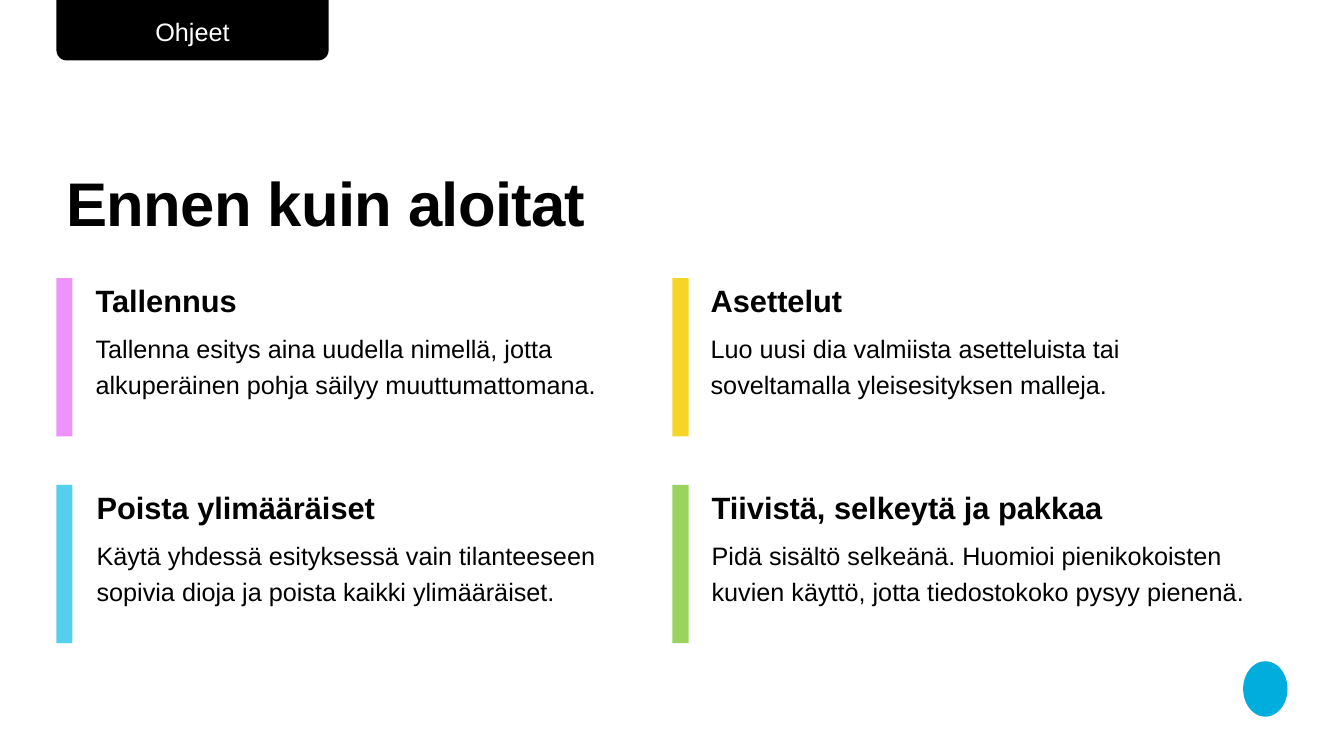
"""Build the slide of instructions to read before starting a presentation."""
from pptx import Presentation
from pptx.dml.color import RGBColor
from pptx.enum.shapes import MSO_SHAPE
from pptx.enum.text import MSO_ANCHOR, PP_ALIGN
from pptx.util import Inches, Pt

BLACK = RGBColor(0x00, 0x00, 0x00)
WHITE = RGBColor(0xFF, 0xFF, 0xFF)
PINK = RGBColor(0xEC, 0x94, 0xFB)
YELLOW = RGBColor(0xF7, 0xD5, 0x28)
SKY = RGBColor(0x55, 0xCF, 0xED)
GREEN = RGBColor(0x9A, 0xD3, 0x5E)
CYAN = RGBColor(0x00, 0xAD, 0xDC)

presentation = Presentation()
presentation.slide_width = Inches(13.33)
presentation.slide_height = Inches(7.5)
slide = presentation.slides.add_slide(presentation.slide_layouts[6])


def write(paragraph, text, size=18, bold=False, color=BLACK, align=PP_ALIGN.LEFT,
          line=1.0, before=0, tracking=0):
    paragraph.alignment = align
    paragraph.line_spacing = line
    paragraph.space_before = Pt(before)
    run = paragraph.add_run()
    run.text = text
    run.font.name = "Arial"
    run.font.size = Pt(size)
    run.font.bold = bold
    run.font.color.rgb = color
    if tracking:
        run._r.get_or_add_rPr().set("spc", str(round(tracking * 100)))


def add_block(kind, left, top, width, height, color):
    block = slide.shapes.add_shape(
        kind, Inches(left), Inches(top), Inches(width), Inches(height))
    block.shadow.inherit = False
    block.fill.solid()
    block.fill.fore_color.rgb = color
    block.line.fill.background()
    return block


add_block(MSO_SHAPE.OVAL, 12.33, 6.56, 0.44, 0.55, CYAN)

title = slide.shapes.add_textbox(
    Inches(0.56), Inches(0.85), Inches(9.25), Inches(1.57)).text_frame
title.word_wrap = True
title.vertical_anchor = MSO_ANCHOR.BOTTOM
write(title.paragraphs[0], "Ennen kuin aloitat", size=44, bold=True, tracking=-0.5)

tips = [
    (0.56, 2.76, 0.85, 2.67, 5.53, PINK, "Tallennus",
     "Tallenna esitys aina uudella nimellä, jotta alkuperäinen pohja säilyy muuttumattomana."),
    (6.67, 2.76, 6.95, 2.67, 5.62, YELLOW, "Asettelut",
     "Luo uusi dia valmiista asetteluista tai soveltamalla yleisesityksen malleja."),
    (0.56, 4.81, 0.86, 4.73, 5.27, SKY, "Poista ylimääräiset",
     "Käytä yhdessä esityksessä vain tilanteeseen sopivia dioja ja poista kaikki ylimääräiset."),
    (6.67, 4.81, 6.96, 4.73, 5.79, GREEN, "Tiivistä, selkeytä ja pakkaa",
     "Pidä sisältö selkeänä. Huomioi pienikokoisten kuvien käyttö, "
     "jotta tiedostokoko pysyy pienenä."),
]
for bar_left, bar_top, left, top, width, color, heading, advice in tips:
    tip = slide.shapes.add_textbox(
        Inches(left), Inches(top), Inches(width), Inches(1.87)).text_frame
    tip.word_wrap = True
    write(tip.paragraphs[0], heading, size=22, bold=True, line=1.2)
    write(tip.add_paragraph(), advice, line=1.2, before=6)
    add_block(MSO_SHAPE.RECTANGLE, bar_left, bar_top, 0.16, 1.57, color)

tab = add_block(MSO_SHAPE.ROUND_2_SAME_RECTANGLE, 0.56, 0, 2.7, 0.6, BLACK)
tab.adjustments[0] = 0
tab.adjustments[1] = 0.17

section = slide.shapes.add_textbox(
    Inches(0.56), Inches(0.11), Inches(2.7), Inches(0.4)).text_frame
section.word_wrap = True
write(section.paragraphs[0], "Ohjeet", color=WHITE, align=PP_ALIGN.CENTER)

presentation.save("out.pptx")
